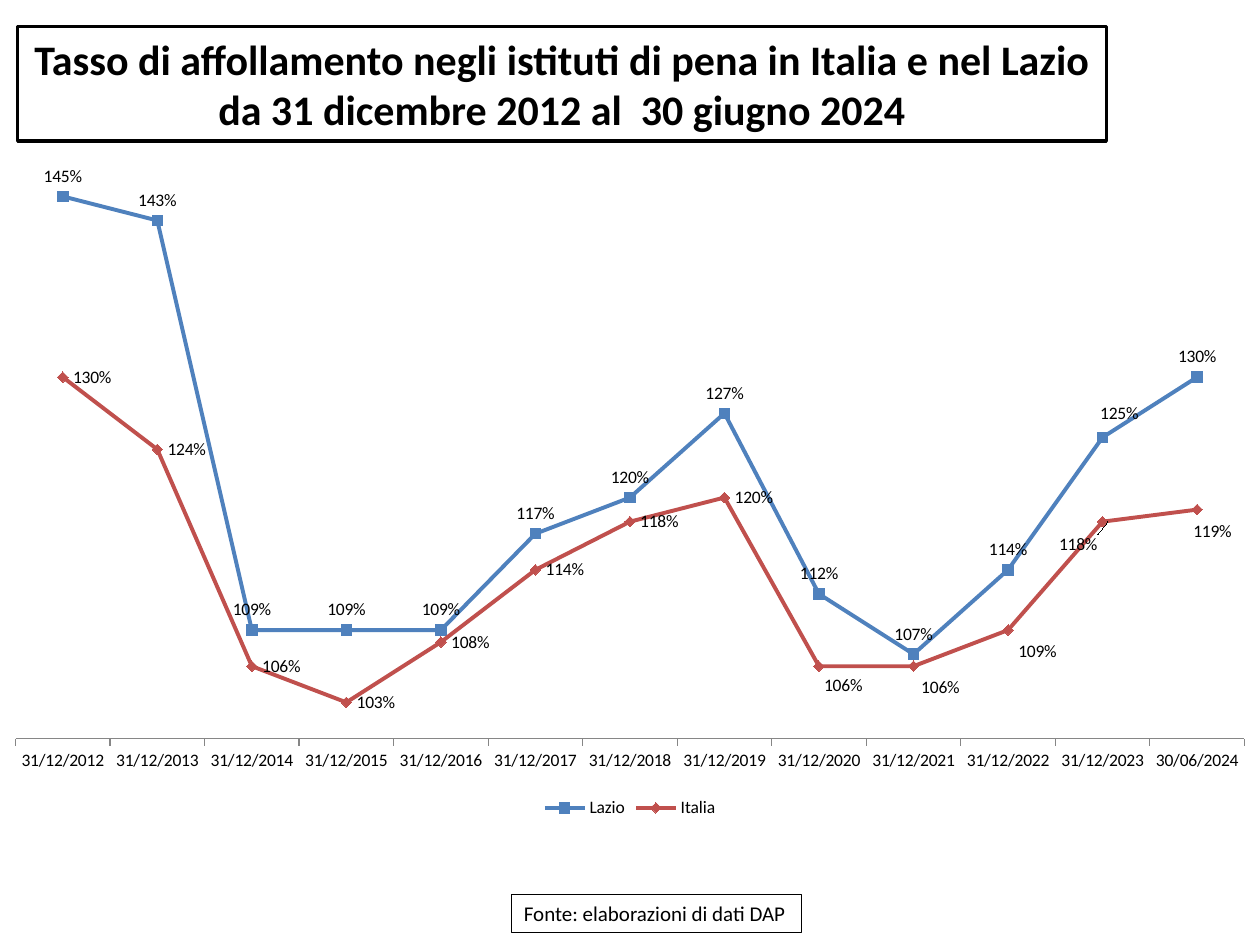
from dataclasses import dataclass

from lxml import etree
from pptx import Presentation
from pptx.chart.data import CategoryChartData
from pptx.dml.color import RGBColor
from pptx.enum.chart import (XL_CHART_TYPE, XL_LABEL_POSITION, XL_LEGEND_POSITION,
                             XL_MARKER_STYLE, XL_TICK_LABEL_POSITION, XL_TICK_MARK)
from pptx.enum.shapes import MSO_SHAPE
from pptx.enum.text import MSO_ANCHOR, PP_ALIGN
from pptx.oxml.ns import qn
from pptx.util import Inches, Pt

ABOVE, RIGHT = XL_LABEL_POSITION.ABOVE, XL_LABEL_POSITION.RIGHT
SQUARE, DIAMOND = XL_MARKER_STYLE.SQUARE, XL_MARKER_STYLE.DIAMOND
TITLE_ONLY = 5


@dataclass(frozen=True)
class Theme:
    font: str = "Calibri"
    black: RGBColor = RGBColor(0, 0, 0)
    white: RGBColor = RGBColor(255, 255, 255)
    axis: RGBColor = RGBColor(0x86, 0x86, 0x86)
    lazio: RGBColor = RGBColor(0x4F, 0x81, 0xBD)
    italia: RGBColor = RGBColor(0xC0, 0x50, 0x4D)
    title_size: Pt = Pt(24)
    source_size: Pt = Pt(12)
    chart_size: Pt = Pt(10)


THEME = Theme()
TITLE = ("Tasso di affollamento negli istituti di pena in Italia e nel Lazio\n"
         "da 31 dicembre 2012 al  30 giugno 2024")
SOURCE = "Fonte: elaborazioni di dati DAP"
DATES = [f"31/12/{year}" for year in range(2012, 2024)] + ["30/06/2024"]
# label_shifts: point index -> label offset as a percentage of the chart size
RATES = {
    "Lazio": dict(
        values=[1.45, 1.43, 1.09, 1.09, 1.09, 1.17, 1.2, 1.27, 1.12, 1.07, 1.14, 1.25, 1.3],
        color=THEME.lazio, marker=SQUARE, position=ABOVE,
        label_shifts={11: (1.3, -0.5)}),
    "Italia": dict(
        values=[1.3, 1.24, 1.06, 1.03, 1.08, 1.14, 1.18, 1.2, 1.06, 1.06, 1.09, 1.18, 1.19],
        color=THEME.italia, marker=DIAMOND, position=RIGHT,
        label_shifts={8: (-0.4, 2.8), 9: (-0.2, 3.1), 10: (0, 3.1),
                      11: (-4.2, 3.3), 12: (-1.1, 3.1)}),
}


def style_font(font, size, bold=False):
    font.name, font.size, font.bold = THEME.font, size, bold
    font.color.rgb = THEME.black


def fill_box(box, text, size, border, align, bold=False):
    box.fill.solid()
    box.fill.fore_color.rgb = THEME.white
    box.line.color.rgb = THEME.black
    box.line.width = border
    frame = box.text_frame
    frame.text = text
    frame.vertical_anchor = MSO_ANCHOR.MIDDLE
    for paragraph in frame.paragraphs:
        paragraph.alignment = align
        for run in paragraph.runs:
            style_font(run.font, size, bold)


def add_title(slide):
    title = slide.shapes.title
    title.left, title.top = Inches(0.14), Inches(0.21)
    title.width, title.height = Inches(8.64), Inches(0.91)
    fill_box(title, TITLE, THEME.title_size, Pt(2), PP_ALIGN.CENTER, bold=True)


def add_source(slide):
    source = slide.shapes.add_shape(MSO_SHAPE.RECTANGLE, Inches(4.06), Inches(7.1),
                                    Inches(2.3), Inches(0.3))
    source.shadow.inherit = False
    fill_box(source, SOURCE, THEME.source_size, Pt(0.75), PP_ALIGN.LEFT)
    source.text_frame.word_wrap = False


def add_manual_layout(layout, **settings):
    manual = etree.SubElement(layout, qn("c:manualLayout"))
    for tag, value in settings.items():
        etree.SubElement(manual, qn(f"c:{tag}")).set("val", str(value))


def place_plot_area(chart):
    plot_area = chart.plots[0]._element.getparent()
    for old_layout in plot_area.findall(qn("c:layout")):
        plot_area.remove(old_layout)
    layout = etree.Element(qn("c:layout"))
    plot_area.insert(0, layout)
    add_manual_layout(layout, layoutTarget="inner", xMode="edge", yMode="edge",
                      x=0.02, y=0.02, w=0.96, h=0.86)


def shift_label(series, index, position, shift):
    series.points[index].data_label.position = position
    label = series._element.xpath(f"c:dLbls/c:dLbl[c:idx/@val='{index}']")[0]
    layout = etree.Element(qn("c:layout"))
    label.insert(1, layout)
    add_manual_layout(layout, x=shift[0] / 100, y=shift[1] / 100)


def style_series(series, color, marker, position, label_shifts):
    series.smooth = False
    series.format.line.color.rgb = color
    series.format.line.width = Pt(2.25)
    series.marker.style, series.marker.size = marker, 6
    series.marker.format.fill.solid()
    series.marker.format.fill.fore_color.rgb = color
    series.marker.format.line.color.rgb = color
    labels = series.data_labels
    labels.show_value, labels.position = True, position
    labels.number_format, labels.number_format_is_linked = "0%", False
    style_font(labels.font, THEME.chart_size)
    for index, shift in label_shifts.items():
        shift_label(series, index, position, shift)


def style_axes(chart):
    dates, rates = chart.category_axis, chart.value_axis
    dates.tick_label_position = XL_TICK_LABEL_POSITION.LOW
    dates.major_tick_mark = XL_TICK_MARK.OUTSIDE
    dates.format.line.color.rgb = THEME.axis
    rates.minimum_scale, rates.maximum_scale = 1, 1.5
    rates.has_major_gridlines = False
    rates.visible = False


def add_rate_chart(slide):
    data = CategoryChartData(number_format="0%")
    data.categories = DATES
    for region, rate in RATES.items():
        data.add_series(region, rate["values"])
    chart = slide.shapes.add_chart(XL_CHART_TYPE.LINE_MARKERS, Inches(-0.08), Inches(0.97),
                                   Inches(10.16), Inches(5.56), data).chart
    style_font(chart.font, THEME.chart_size)
    chart.has_title = False
    chart.has_legend = True
    chart.legend.position = XL_LEGEND_POSITION.BOTTOM
    chart.legend.include_in_layout = False
    style_axes(chart)
    place_plot_area(chart)
    plot = chart.plots[0]
    plot.vary_by_categories = False
    for series in plot.series:
        rate = RATES[series.name]
        style_series(series, rate["color"], rate["marker"], rate["position"],
                     rate["label_shifts"])


def main():
    presentation = Presentation()
    presentation.slide_width, presentation.slide_height = Inches(10), Inches(7.5)
    slide = presentation.slides.add_slide(presentation.slide_layouts[TITLE_ONLY])
    add_title(slide)
    add_source(slide)
    add_rate_chart(slide)
    presentation.save("out.pptx")


if __name__ == "__main__":
    main()
